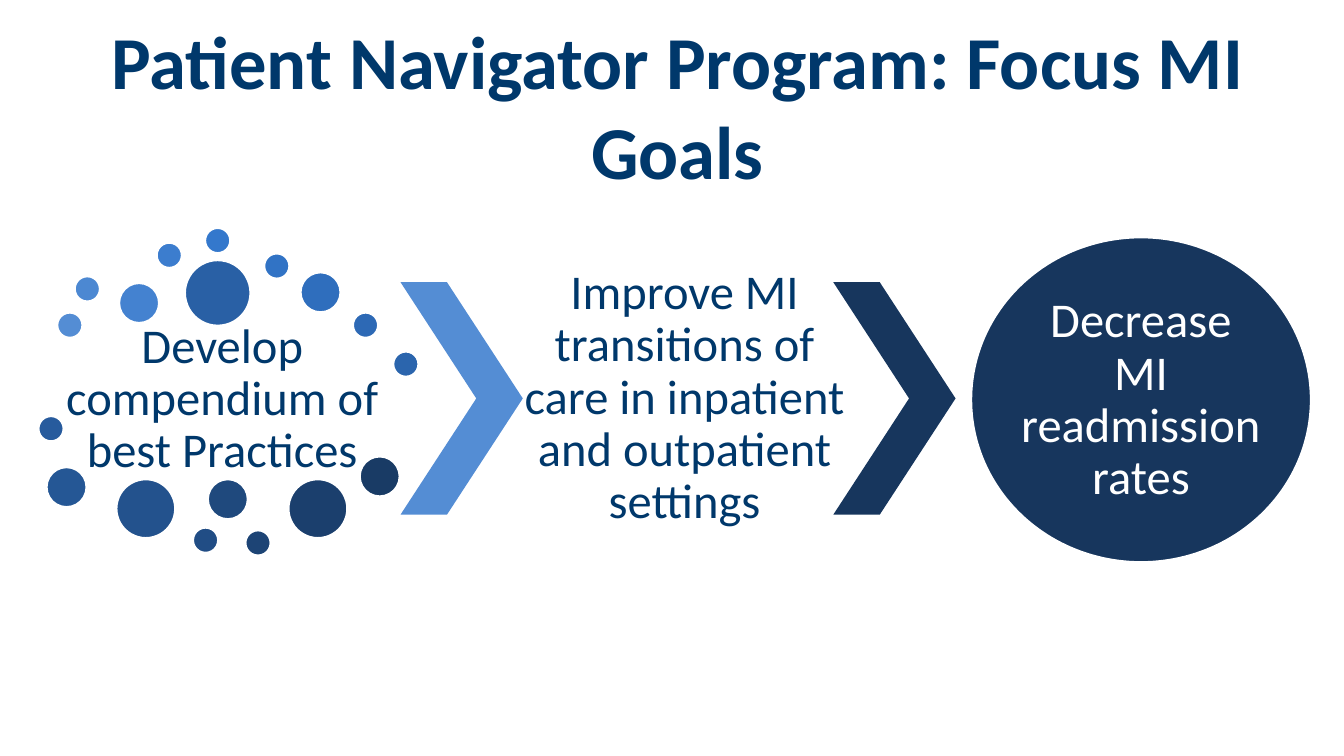
from dataclasses import dataclass

from pptx import Presentation
from pptx.dml.color import RGBColor
from pptx.enum import shapes, text
from pptx.util import Inches, Pt


@dataclass(frozen=True)
class Theme:
    font: str = "Calibri"
    ink: str = "00386B"
    white: str = "FFFFFF"
    light: str = "548DD4"
    dark: str = "17365D"
    head: int = 40
    body: int = 26
    edge: int = 2


THEME = Theme()
SMALL, MID, LARGE, HUGE = 0.2, 0.31, 0.45, 0.5

# left, top, diameter, colour
DOTS = [
    (0.42, 2.32, SMALL, "548DD4"),
    (0.55, 2.05, SMALL, "4C88D2"),
    (0.88, 2.1, MID, "4482D0"),
    (1.16, 1.8, SMALL, "3C7DCE"),
    (1.52, 1.69, SMALL, "3478CC"),
    (1.96, 1.88, SMALL, "3173C5"),
    (2.23, 2.02, MID, "2F6EBD"),
    (2.62, 2.32, SMALL, "2D69B5"),
    (2.92, 2.61, SMALL, "2B65AD"),
    (1.37, 1.93, HUGE, "2960A5"),
    (0.28, 3.09, SMALL, "275B9D"),
    (0.34, 3.47, MID, "255795"),
    (0.86, 3.56, LARGE, "23528D"),
    (1.43, 3.92, SMALL, "214D85"),
    (1.54, 3.56, MID, "1F497D"),
    (1.82, 3.94, SMALL, "1D4475"),
    (2.14, 3.56, LARGE, "1B3F6D"),
    (2.67, 3.39, MID, "193B65"),
]


def write(frame, words, size=THEME.body, color=THEME.ink, bold=False,
          inset=0.04, pitch=0.9):
    frame.word_wrap = True
    frame.auto_size = text.MSO_AUTO_SIZE.NONE
    frame.vertical_anchor = text.MSO_ANCHOR.MIDDLE
    frame.margin_left = frame.margin_right = Inches(inset)
    frame.margin_top = frame.margin_bottom = Inches(min(inset, 0.05))
    frame.text = words
    para = frame.paragraphs[0]
    para.alignment = text.PP_ALIGN.CENTER
    para.line_spacing = pitch
    for run in para.runs:
        font = run.font
        font.name, font.size, font.bold = THEME.font, Pt(size), bold
        font.color.rgb = RGBColor.from_string(color)


def add_title(slide, words, *box):
    title = slide.shapes.title
    title.left, title.top, title.width, title.height = map(Inches, box)
    write(title.text_frame, words, size=THEME.head, bold=True,
          inset=0.1, pitch=1.0)


def add_label(slide, words, *box, **style):
    label = slide.shapes.add_textbox(*map(Inches, box))
    write(label.text_frame, words, **style)


def add_solid(slide, kind, color, *box):
    solid = slide.shapes.add_shape(kind, *map(Inches, box))
    solid.shadow.inherit = False
    solid.fill.solid()
    solid.fill.fore_color.rgb = RGBColor.from_string(color)
    return solid


def add_disc(slide, color, *box):
    disc = add_solid(slide, shapes.MSO_SHAPE.OVAL, color, *box)
    disc.line.color.rgb = RGBColor.from_string(THEME.white)
    disc.line.width = Pt(THEME.edge)


def add_arrow(slide, color, left):
    arrow = add_solid(slide, shapes.MSO_SHAPE.CHEVRON, color,
                      left, 2.1, 0.91, 1.73)
    arrow.adjustments[0] = 0.62
    arrow.line.fill.background()


def main():
    deck = Presentation()
    deck.slide_width = Inches(10)
    deck.slide_height = deck.slide_width * 9 // 16
    slide = deck.slides.add_slide(deck.slide_layouts[5])

    add_title(slide, "Patient Navigator Program: Focus MI\vGoals",
              0.54, 0.23, 9, 1.1)
    add_label(slide, "Develop compendium of best Practices",
              0.42, 2.57, 2.47, 0.81)
    for left, top, size, color in DOTS:
        add_disc(slide, color, left, top, size, size)
    add_arrow(slide, THEME.light, 2.98)
    add_label(slide, "Improve MI transitions of care in inpatient "
              "and outpatient settings", 3.86, 2.1, 2.47, 1.73)
    add_arrow(slide, THEME.dark, 6.2)
    add_disc(slide, THEME.dark, 7.22, 1.76, 2.54, 2.43)
    add_label(slide, "Decrease MI readmission rates",
              7.59, 2.12, 1.8, 1.72, color=THEME.white, inset=0)

    deck.save("out.pptx")


if __name__ == "__main__":
    main()
